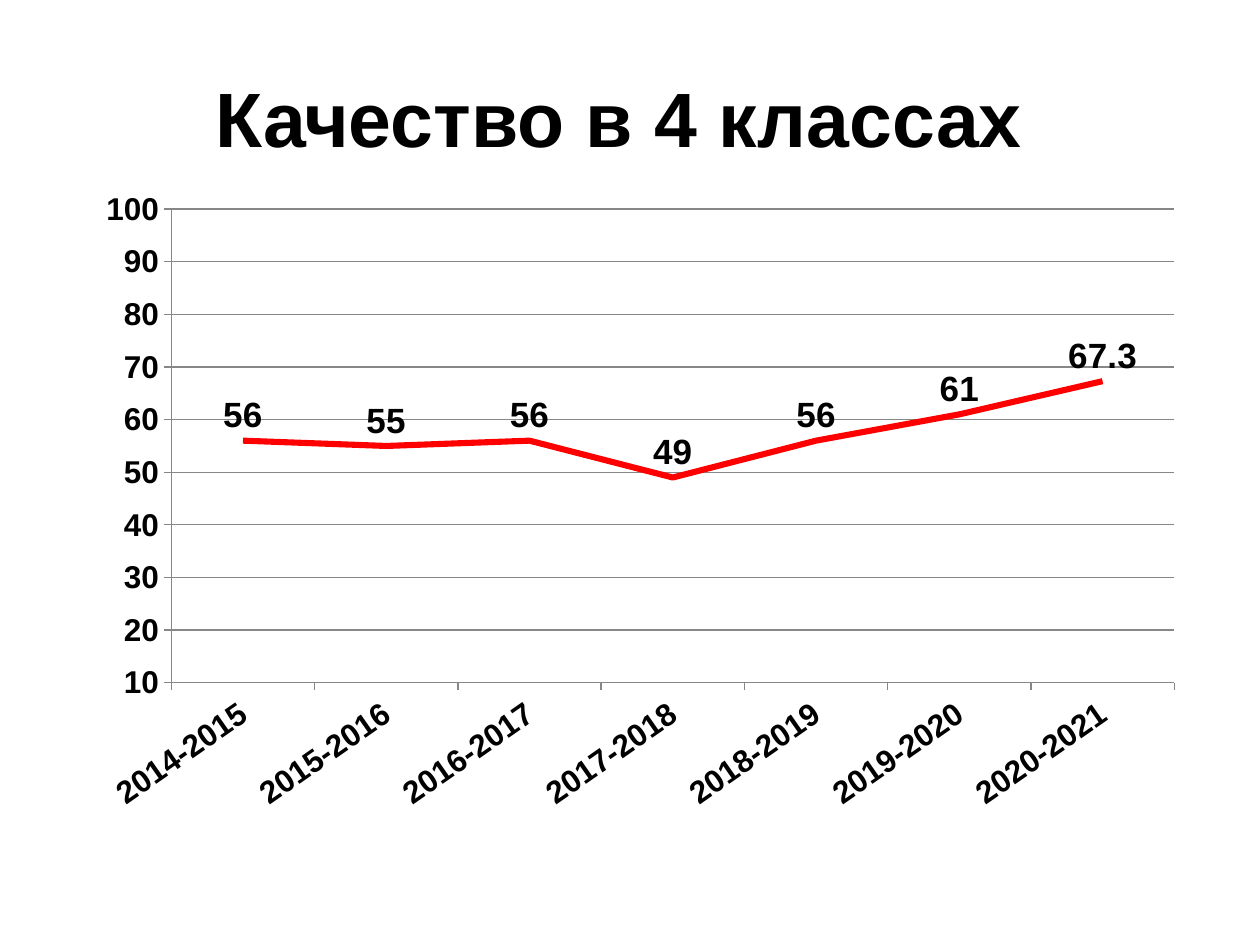
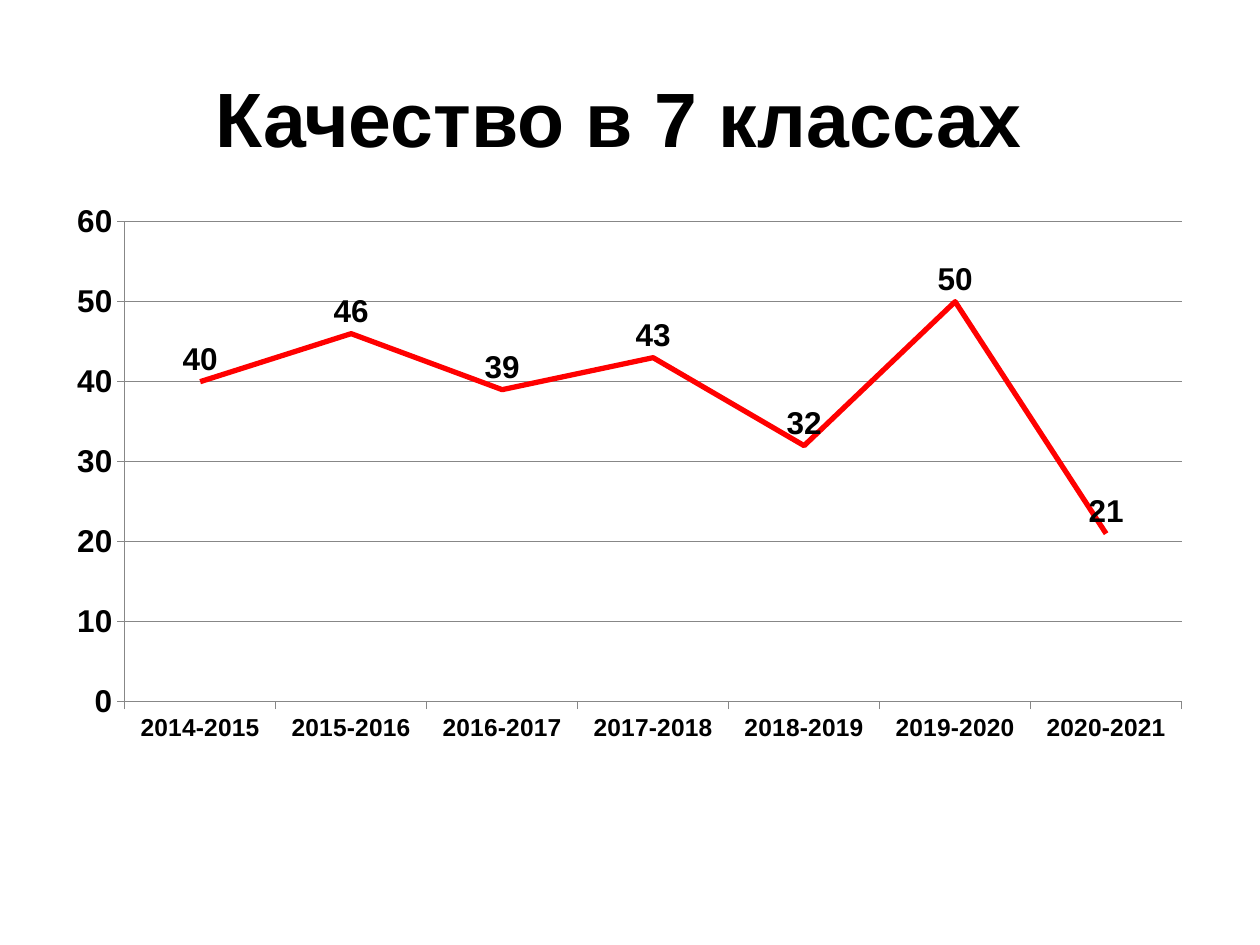
from dataclasses import dataclass
from typing import Optional

import pptx
import pptx.chart.axis
import pptx.chart.chart
import pptx.chart.data
import pptx.dml.color
import pptx.enum.chart
import pptx.enum.text
import pptx.oxml
import pptx.oxml.ns
import pptx.slide
import pptx.text.text
import pptx.util
from pptx.util import Inches

FONT = "Arial"
BLACK = "000000"
RED = "FF0000"
GRAY = "878787"
FIRST_YEAR = 2014


@dataclass
class Box:
    left: float
    top: float
    width: float
    height: float

    def lengths(self) -> tuple:
        return tuple(Inches(side) for side in (self.left, self.top, self.width, self.height))


@dataclass
class GradeQuality:
    title: str
    quality: tuple
    frame: Box
    plot: Box
    scale: tuple
    line_width: float
    label_size: int
    year_size: int
    year_angle: int


TITLE_BOX = Box(0.5, 0.3, 9, 1.25)

GRADES = (
    GradeQuality("Качество в 4 классах ", (56, 55, 56, 49, 56, 61, 67.3),
                 Box(0.67, 1.42, 8.83, 5.17), Box(1.36, 1.66, 7.96, 3.76),
                 (10, 100), 3.5, 20, 18, -35),
    GradeQuality("Качество в 7 классах ", (40, 46, 39, 43, 32, 50, 21),
                 Box(0.43, 1.53, 9.13, 4.44), Box(0.99, 1.76, 8.39, 3.81),
                 (0, 60), 3, 18, 14, 0),
)


def color(value: str) -> pptx.dml.color.RGBColor:
    return pptx.dml.color.RGBColor.from_string(value)


def set_font(font: pptx.text.text.Font, size: float, bold: bool = True, fill: str = BLACK) -> None:
    font.name = FONT
    font.size = pptx.util.Pt(size)
    font.bold = bold
    font.color.rgb = color(fill)


def add_text(slide: pptx.slide.Slide, text: str, *, box: Box, size: float,
             bold: bool = True, fill: str = BLACK,
             align: Optional[pptx.enum.text.PP_ALIGN] = pptx.enum.text.PP_ALIGN.CENTER) -> None:
    frame = slide.shapes.add_textbox(*box.lengths()).text_frame
    frame.word_wrap = True
    frame.vertical_anchor = pptx.enum.text.MSO_ANCHOR.MIDDLE
    paragraph = frame.paragraphs[0]
    paragraph.alignment = align
    run = paragraph.add_run()
    run.text = text
    set_font(run.font, size, bold, fill)


def set_line(line: pptx.dml.line.LineFormat, fill: str, width: float) -> None:
    line.color.rgb = color(fill)
    line.width = pptx.util.Pt(width)


def style_axis(axis: pptx.chart.axis._BaseAxis, size: float) -> None:
    axis.major_tick_mark = pptx.enum.chart.XL_TICK_MARK.OUTSIDE
    axis.minor_tick_mark = pptx.enum.chart.XL_TICK_MARK.NONE
    set_font(axis.tick_labels.font, size)
    set_line(axis.format.line, GRAY, 0.75)


def place_plot(chart: pptx.chart.chart.Chart, frame: Box, plot: Box) -> None:
    shares = {
        "x": (plot.left - frame.left) / frame.width,
        "y": (plot.top - frame.top) / frame.height,
        "w": plot.width / frame.width,
        "h": plot.height / frame.height,
    }
    modes = "".join(f'<c:{side}Mode val="edge"/>' for side in "xy")
    sizes = "".join(f'<c:{side} val="{share:.4f}"/>' for side, share in shares.items())
    layout = pptx.oxml.parse_xml(
        f'<c:layout {pptx.oxml.ns.nsdecls("c")}><c:manualLayout>'
        f'<c:layoutTarget val="inner"/>{modes}{sizes}</c:manualLayout></c:layout>')
    plot_area = chart.element.xpath("./c:chart/c:plotArea")[0]
    for automatic in plot_area.xpath("./c:layout"):
        plot_area.remove(automatic)
    plot_area.insert(0, layout)


def add_quality_chart(slide: pptx.slide.Slide, grade: GradeQuality) -> None:
    data = pptx.chart.data.CategoryChartData()
    data.categories = [f"{year}-{year + 1}"
                       for year in range(FIRST_YEAR, FIRST_YEAR + len(grade.quality))]
    data.add_series("Series 1", grade.quality)
    chart = slide.shapes.add_chart(
        pptx.enum.chart.XL_CHART_TYPE.LINE, *grade.frame.lengths(), data).chart
    chart.has_legend = False
    chart.has_title = False
    set_font(chart.font, 18, bold=False)

    years, percent = chart.category_axis, chart.value_axis
    style_axis(years, grade.year_size)
    style_axis(percent, 18)
    percent.minimum_scale, percent.maximum_scale = grade.scale
    percent.major_unit = 10
    percent.has_major_gridlines = True
    set_line(percent.major_gridlines.format.line, GRAY, 0.75)
    year_text = chart.element.xpath(".//c:catAx/c:txPr/a:bodyPr")[0]
    year_text.set("rot", str(grade.year_angle * 60000))
    year_text.set("vert", "horz")

    plot = chart.plots[0]
    plot.vary_by_categories = False
    quality = plot.series[0]
    quality.smooth = False
    quality.marker.style = pptx.enum.chart.XL_MARKER_STYLE.NONE
    set_line(quality.format.line, RED, grade.line_width)
    labels = quality.data_labels
    labels.show_value = True
    labels.position = pptx.enum.chart.XL_LABEL_POSITION.ABOVE
    set_font(labels.font, grade.label_size)
    place_plot(chart, grade.frame, grade.plot)


def main() -> None:
    deck = pptx.Presentation()
    deck.slide_width, deck.slide_height = Inches(10), Inches(7.5)
    for grade in GRADES:
        slide = deck.slides.add_slide(deck.slide_layouts[6])
        add_text(slide, grade.title, box=TITLE_BOX, size=44)
        add_quality_chart(slide, grade)
    deck.save("out.pptx")


if __name__ == "__main__":
    main()
